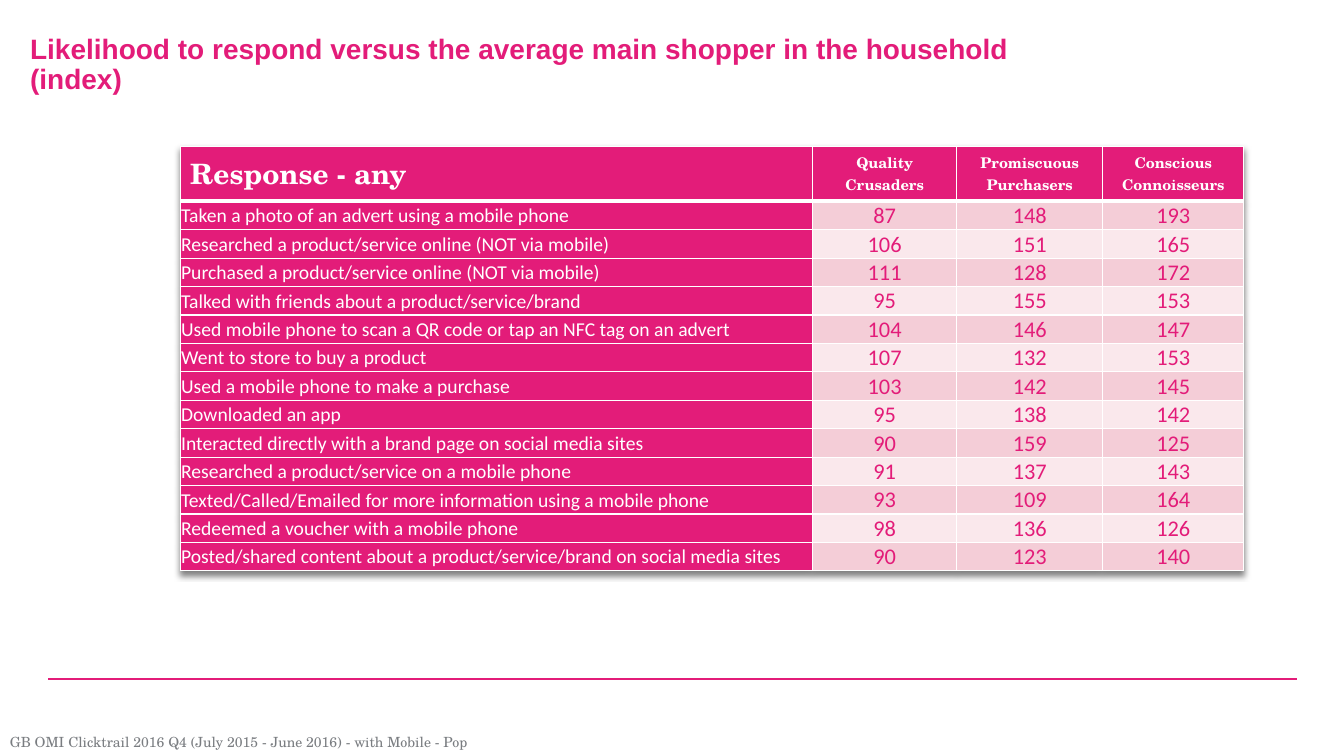
"""Builds a one-slide index table of shopper responses to adverts."""
import pptx
import pptx.util
import pptx.oxml
import pptx.dml.color
import pptx.enum.shapes
import pptx.enum.text

RGBColor = pptx.dml.color.RGBColor
Align = pptx.enum.text.PP_ALIGN
Anchor = pptx.enum.text.MSO_ANCHOR
PINK = RGBColor(0xE3, 0x1C, 0x79)
ROSE = RGBColor(0xF4, 0xCD, 0xD7)
BLUSH = RGBColor(0xFA, 0xE8, 0xEC)
WHITE = RGBColor(0xFF, 0xFF, 0xFF)
GREY = RGBColor(0x7A, 0x7D, 0x81)
SCALE = 9080
SERIF = "TeX Gyre Schola"
NS = 'xmlns:a="http://schemas.openxmlformats.org/drawingml/2006/main"'

HEADS = ["Response - any", "Quality Crusaders", "Promiscuous Purchasers",
         "Conscious Connoisseurs"]
ROWS = [
    ("Taken a photo of an advert using a mobile phone", 87, 148, 193),
    ("Researched a product/service online (NOT via mobile)", 106, 151, 165),
    ("Purchased a product/service online (NOT via mobile)", 111, 128, 172),
    ("Talked with friends about a product/service/brand", 95, 155, 153),
    ("Used mobile phone to scan a QR code or tap an NFC tag on an advert", 104, 146, 147),
    ("Went to store to buy a product", 107, 132, 153),
    ("Used a mobile phone to make a purchase", 103, 142, 145),
    ("Downloaded an app", 95, 138, 142),
    ("Interacted directly with a brand page on social media sites", 90, 159, 125),
    ("Researched a product/service on a mobile phone", 91, 137, 143),
    ("Texted/Called/Emailed for more information using a mobile phone", 93, 109, 164),
    ("Redeemed a voucher with a mobile phone", 98, 136, 126),
    ("Posted/shared content about a product/service/brand on social media sites", 90, 123, 140),
]


def px(num):
    return pptx.util.Emu(num * SCALE)


def put(item, form):
    for name, value in form.items():
        setattr(item, name, value)


class Deck:
    """Holds the style and the current slide."""

    def __init__(self):
        self.file = pptx.Presentation()
        put(self.file, {"slide_width": px(1343), "slide_height": px(755)})
        self.slide = self.file.slides.add_slide(self.file.slide_layouts[5])

    def fill(self, frame, lines, size, font, color, bold=False, **form):
        frame.text = "\n".join(lines)
        for para in frame.paragraphs:
            put(para, form)
            for run in para.runs:
                put(run.font, {"size": pptx.util.Pt(size), "name": font, "bold": bold})
                run.font.color.rgb = color

    def place(self, shape, left, top, width, height):
        put(shape, {"left": px(left), "top": px(top),
                    "width": px(width), "height": px(height)})

    def title(self, lines, *area):
        shape = self.slide.shapes.title
        self.place(shape, *area)
        put(shape.text_frame, {"word_wrap": True, "vertical_anchor": Anchor.MIDDLE,
                               "auto_size": pptx.enum.text.MSO_AUTO_SIZE.NONE})
        self.fill(shape.text_frame, lines, 20, "Arial", PINK, True,
                  alignment=Align.LEFT, line_spacing=0.9)

    def note(self, text, *area):
        box = self.slide.shapes.add_textbox(*map(px, area))
        box.text_frame.word_wrap = True
        self.fill(box.text_frame, [text], 10, SERIF, GREY)

    def rule(self, *ends):
        kind = pptx.enum.shapes.MSO_CONNECTOR.STRAIGHT
        line = self.slide.shapes.add_connector(kind, *map(px, ends))
        line.line.color.rgb = PINK
        line.line.width = pptx.util.Pt(1)
        line._element.spPr.append(pptx.oxml.parse_xml(f"<a:effectLst {NS}/>"))

    def edge(self, cell, base):
        props = cell._tc.get_or_add_tcPr()
        for side, width in zip("LRTB", (1, 1, 1, base)):
            props.append(pptx.oxml.parse_xml(
                f'<a:ln{side} {NS} w="{width * 12700}"><a:solidFill>'
                f'<a:srgbClr val="{WHITE}"/></a:solidFill></a:ln{side}>'))

    def cell(self, cell, text, row, col):
        self.edge(cell, 1 if row else 3)
        cell.fill.solid()
        shade = ROSE if row % 2 else BLUSH
        cell.fill.fore_color.rgb = shade if row and col else PINK
        if row:
            put(cell, {"vertical_anchor": Anchor.MIDDLE, "margin_left": px(1),
                       "margin_right": px(1), "margin_top": px(1), "margin_bottom": 0})
            style = (16, "Calibri", PINK) if col else (14, "Calibri", WHITE)
        else:
            style = (10.5 if col else 20, SERIF, WHITE, True)
        self.fill(cell.text_frame, [str(text)], *style,
                  alignment=Align.CENTER if col else Align.LEFT)

    def table(self, left, top, widths, head, step):
        data = [HEADS, *ROWS]
        area = (left, top, sum(widths), head + step * len(ROWS))
        grid = self.slide.shapes.add_table(len(data), len(widths), *map(px, area)).table
        grid._tbl.tblPr.insert(0, pptx.oxml.parse_xml(
            f'<a:effectLst {NS}><a:outerShdw blurRad="50800" dist="38100" dir="5400000">'
            '<a:srgbClr val="000000"><a:alpha val="50000"/></a:srgbClr>'
            '</a:outerShdw></a:effectLst>'))
        for col, width in enumerate(widths):
            grid.columns[col].width = px(width)
        for row, texts in enumerate(data):
            grid.rows[row].height = px(step if row else head)
            for col, text in enumerate(texts):
                self.cell(grid.cell(row, col), text, row, col)


def main():
    deck = Deck()
    deck.rule(48, 678, 1296, 678)
    deck.table(180, 146, [632, 144, 146, 141], 55, 28)
    deck.title(["Likelihood to respond versus the average main shopper in the household",
                "(index)"], 20, 32, 1408, 67)
    deck.note("GB OMI Clicktrail 2016 Q4 (July 2015 - June 2016) - with Mobile - Pop",
              0, 728, 672, 27)
    deck.file.save("out.pptx")


if __name__ == "__main__":
    main()
